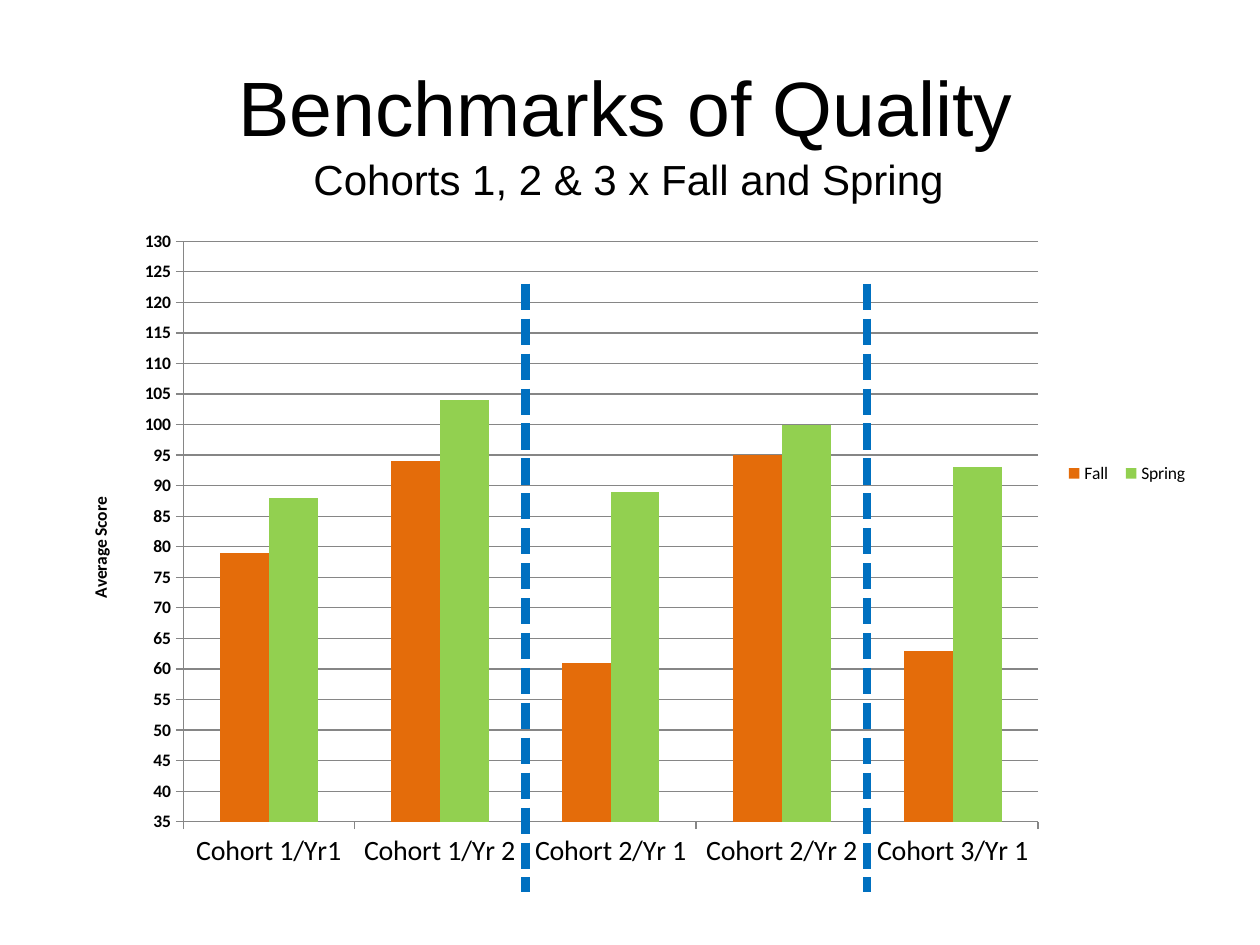
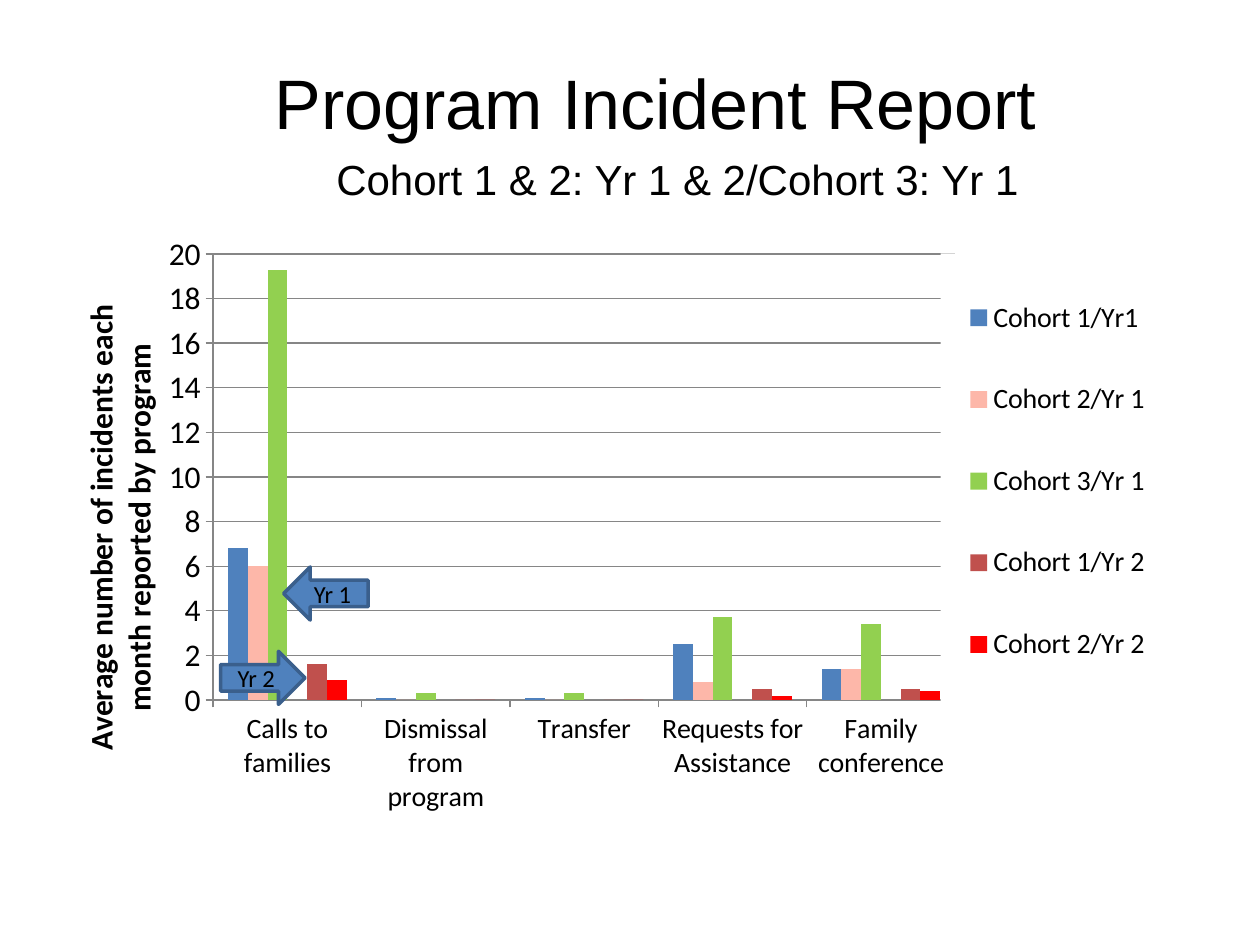
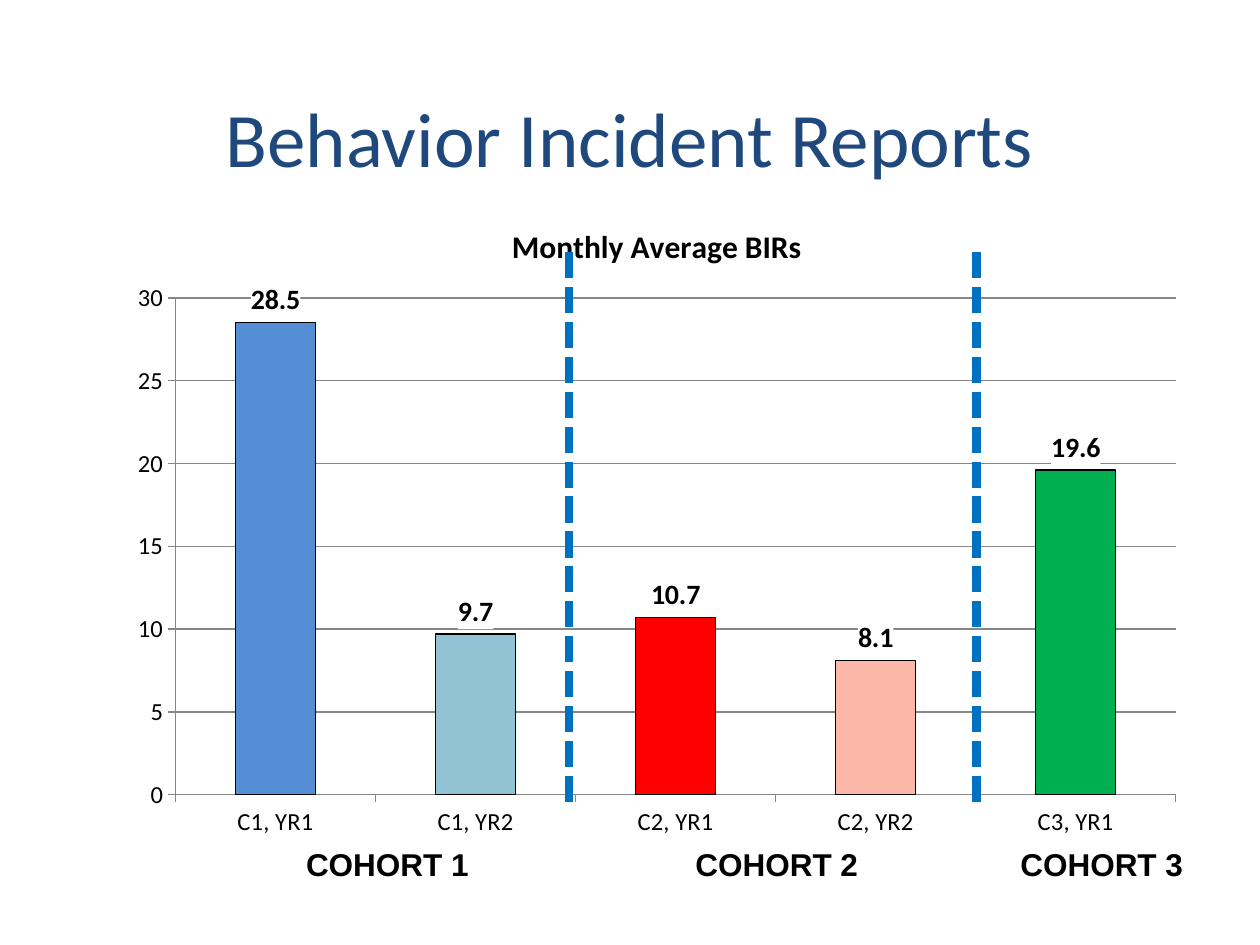
from dataclasses import dataclass

import lxml.etree
import pptx
import pptx.chart.data
import pptx.dml.color
import pptx.enum.chart
import pptx.enum.dml
import pptx.enum.shapes
import pptx.enum.text
import pptx.oxml.ns
import pptx.util

Cm, Pt = pptx.util.Cm, pptx.util.Pt
qn = pptx.oxml.ns.qn
SHAPES = pptx.enum.shapes.MSO_SHAPE
ALIGN = pptx.enum.text.PP_ALIGN
ANCHOR = pptx.enum.text.MSO_ANCHOR


@dataclass(frozen=True)
class Theme:
    heading_font: str = "Arial"
    chart_font: str = "Calibri"
    text: str = "000000"
    navy: str = "1F497D"
    white: str = "FFFFFF"
    grid: str = "868686"
    divider: str = "0070C0"
    blue: str = "4F81BD"
    blue_edge: str = "3A5F8C"
    orange: str = "E46C0A"
    light_orange: str = "F79646"
    lime: str = "92D050"
    pink: str = "FDB7A9"
    brick: str = "C0504D"
    red: str = "FF0000"
    sky: str = "558ED5"
    pale_teal: str = "92C3D4"
    teal: str = "4BACC6"
    green: str = "00B050"
    title_size: int = 44
    small_title_size: int = 40
    subtitle_size: int = 24
    label_size: int = 18
    category_size: int = 16
    small_label_size: int = 14
    chart_size: int = 10


THEME = Theme()


def rgb(color):
    return pptx.dml.color.RGBColor.from_string(color)


def style_font(font, size, name=THEME.chart_font, color=THEME.text, bold=False):
    font.size, font.name, font.bold = Pt(size), name, bold
    font.color.rgb = rgb(color)


def write(text_frame, text, align=None, **font_format):
    paragraph = text_frame.paragraphs[0]
    paragraph.alignment = align
    run = paragraph.add_run()
    run.text = text
    style_font(run.font, **font_format)


def paint(part, fill, edge=None, width=0.75):
    part.fill.solid()
    part.fill.fore_color.rgb = rgb(fill)
    if edge:
        part.line.color.rgb = rgb(edge)
        part.line.width = Pt(width)


def add_title(slide, box, text, align=ALIGN.LEFT, wrap=False, **font_format):
    title = slide.shapes.title
    title.left, title.top, title.width, title.height = map(Cm, box)
    frame = title.text_frame
    frame.word_wrap = wrap
    frame.auto_size = pptx.enum.text.MSO_AUTO_SIZE.NONE
    frame.vertical_anchor = ANCHOR.TOP
    write(frame, text, align, **font_format)


def add_label(slide, box, text, **font_format):
    label = slide.shapes.add_textbox(*map(Cm, box))
    label.text_frame.word_wrap = False
    label.text_frame.auto_size = pptx.enum.text.MSO_AUTO_SIZE.SHAPE_TO_FIT_TEXT
    write(label.text_frame, text, name=THEME.heading_font, **font_format)


def add_heading(slide, box, title, size, subtitle, subtitle_left, subtitle_width):
    """Place the title in the box and the subtitle just below it."""
    left, top = box[:2]
    add_title(slide, box, title, size=size, name=THEME.heading_font)
    add_label(slide, (left + subtitle_left, top + 1.9, subtitle_width, 1.27),
              subtitle, size=THEME.subtitle_size)


def add_dividers(slide, box, offsets, start, end):
    """Draw dashed vertical lines at offsets from the box's left edge."""
    left, top = box[:2]
    for offset in offsets:
        x = Cm(left + offset)
        line = slide.shapes.add_connector(
            pptx.enum.shapes.MSO_CONNECTOR.STRAIGHT,
            x, Cm(top + start), x, Cm(top + end))
        line.line.color.rgb = rgb(THEME.divider)
        line.line.width = Pt(5)
        line.line.dash_style = pptx.enum.dml.MSO_LINE.SQUARE_DOT
        lxml.etree.SubElement(line._element.spPr, qn("a:effectLst"))


def add_arrow(slide, box, offset, kind, text):
    arrow = slide.shapes.add_shape(
        kind, Cm(box[0] + offset[0]), Cm(box[1] + offset[1]), Cm(1.7), Cm(1.07))
    arrow.shadow.inherit = False
    paint(arrow, THEME.blue, THEME.blue_edge, 2)
    arrow.text_frame.word_wrap = False
    arrow.text_frame.vertical_anchor = ANCHOR.MIDDLE
    write(arrow.text_frame, text, ALIGN.CENTER, size=THEME.small_label_size)


def set_layout(element, after=None, inner=False, **fractions):
    """Fix a chart part at fractions (x, y, w, h) of the chart."""
    for old in element.findall(qn("c:layout")):
        element.remove(old)
    layout = lxml.etree.Element(qn("c:layout"))
    manual = lxml.etree.SubElement(layout, qn("c:manualLayout"))
    settings = {"layoutTarget": "inner"} if inner else {}
    settings |= {"xMode": "edge", "yMode": "edge", **fractions}
    for name, value in settings.items():
        lxml.etree.SubElement(manual, qn(f"c:{name}"), val=str(value))
    index = 0 if after is None else element.index(element.findall(qn(after))[-1]) + 1
    element.insert(index, layout)


def add_white_background(element, after):
    """Give a chart part a white fill, in the place its schema asks for."""
    background = lxml.etree.Element(qn("c:spPr"))
    fill = lxml.etree.SubElement(background, qn("a:solidFill"))
    lxml.etree.SubElement(fill, qn("a:srgbClr"), val=THEME.white)
    element.find(qn(after)).addnext(background)


def add_column_chart(slide, box, categories, series, plot, category_size,
                     value_size, value_bold=False):
    """Add a clustered column chart; series holds (name, values, color)."""
    data = pptx.chart.data.CategoryChartData()
    data.categories = categories
    for name, values, _ in series:
        data.add_series(name, values)
    chart = slide.shapes.add_chart(
        pptx.enum.chart.XL_CHART_TYPE.COLUMN_CLUSTERED, *map(Cm, box), data).chart
    chart.has_title = chart.has_legend = False
    style_font(chart.font, THEME.chart_size)
    columns = chart.plots[0]
    columns.vary_by_categories = False
    columns.gap_width, columns.overlap = 150, 0
    for column, (_, _, color) in zip(columns.series, series):
        paint(column.format, color)
        column.invert_if_negative = False
    for axis, size, bold in ((chart.category_axis, category_size, False),
                             (chart.value_axis, value_size, value_bold)):
        style_font(axis.tick_labels.font, size, bold=bold)
        axis.major_tick_mark = pptx.enum.chart.XL_TICK_MARK.OUTSIDE
        axis.format.line.color.rgb = rgb(THEME.grid)
    chart.value_axis.has_major_gridlines = True
    chart.value_axis.major_gridlines.format.line.color.rgb = rgb(THEME.grid)
    set_layout(chart._chartSpace.chart.plotArea, inner=True,
               **dict(zip("xywh", plot)))
    return chart


def add_value_title(axis, text, size, x, y):
    title = axis.axis_title
    write(title.text_frame, text, size=size, bold=True)
    body = title._element.find(".//" + qn("a:bodyPr"))
    body.set("rot", "-5400000")
    body.set("vert", "horz")
    set_layout(title._element, "c:tx", x=x, y=y)
    axis.tick_labels.number_format = "0"
    axis.tick_labels.number_format_is_linked = False


def add_legend(chart, size, hidden=(), **fractions):
    chart.has_legend = True
    legend = chart.legend
    legend.position = pptx.enum.chart.XL_LEGEND_POSITION.RIGHT
    legend.include_in_layout = False
    style_font(legend.font, size)
    set_layout(legend._element, "c:legendPos", **fractions)
    add_white_background(legend._element, "c:overlay")
    for index in hidden:
        entry = lxml.etree.Element(qn("c:legendEntry"))
        lxml.etree.SubElement(entry, qn("c:idx"), val=str(index))
        lxml.etree.SubElement(entry, qn("c:delete"), val="1")
        legend._element.find(qn("c:layout")).addprevious(entry)


def label_columns(series):
    labels = series.data_labels
    labels.show_value = True
    labels.number_format = "#,##0.0"
    labels.number_format_is_linked = False
    labels.position = pptx.enum.chart.XL_LABEL_POSITION.OUTSIDE_END
    style_font(labels.font, THEME.category_size, bold=True)
    add_white_background(labels._element, "c:numFmt")


def benchmark_chart(slide, box):
    chart = add_column_chart(
        slide, box,
        ["Cohort 1/Yr1", "Cohort 1/Yr 2", "Cohort 2/Yr 1", "Cohort 2/Yr 2",
         "Cohort 3/Yr 1"],
        [("Fall ", (79, 94, 61, 95, 63), THEME.orange),
         ("Spring ", (88, 104, 89, 100, 93), THEME.lime)],
        (0.106, 0.03, 0.754, 0.85), THEME.category_size, THEME.chart_size, True)
    axis = chart.value_axis
    axis.minimum_scale, axis.maximum_scale, axis.major_unit = 35, 130, 5
    add_value_title(axis, "Average Score", THEME.chart_size, 0.02, 0.4)
    add_legend(chart, THEME.chart_size, x=0.88, y=0.35, w=0.12, h=0.04)
    add_dividers(slide, box, (9.32, 16.21), 1.27, 13.53)


def incident_chart(slide, box):
    chart = add_column_chart(
        slide, box,
        ["Calls to families", "Dismissal from program", "Transfer",
         "Requests for Assistance", "Family conference"],
        [("Cohort 1/Yr1", (6.8, 0.1, 0.1, 2.5, 1.4), THEME.blue),
         ("Cohort 2/Yr 1", (6, 0, 0, 0.8, 1.4), THEME.pink),
         ("Cohort 3/Yr 1", (19.3, 0.3, 0.3, 3.7, 3.4), THEME.lime),
         ("Series 4", (None,) * 5, THEME.light_orange),
         ("Cohort 1/Yr 2", (1.6, 0, 0, 0.5, 0.5), THEME.brick),
         ("Cohort 2/Yr 2", (0.9, 0, 0, 0.2, 0.4), THEME.red)],
        (0.126, 0.051, 0.667, 0.685), THEME.category_size, THEME.label_size)
    chart.value_axis.maximum_scale = 20
    add_value_title(chart.value_axis,
                    "Average number of incidents each month reported by program",
                    THEME.label_size, 0, 0.12)
    add_legend(chart, THEME.category_size, hidden=[3], x=0.78, y=0.05, w=0.21, h=0.7)
    add_arrow(slide, box, (4.25, 6.98), SHAPES.LEFT_ARROW, "Yr 1")
    add_arrow(slide, box, (2.98, 8.68), SHAPES.RIGHT_ARROW, "Yr 2")


def behavior_chart(slide, box):
    chart = add_column_chart(
        slide, box, ["C1, YR1", "C1, YR2", "C2, YR1", "C2, YR2", "C3, YR1"],
        [("Series 1", (28.5, 9.7, 10.7, 8.1, 19.6), THEME.teal)],
        (0.055, 0.152, 0.925, 0.763), THEME.small_label_size, THEME.small_label_size)
    chart.has_title = True
    write(chart.chart_title.text_frame, "Monthly Average BIRs",
          size=THEME.label_size, bold=True)
    series = chart.plots[0].series[0]
    colors = (THEME.sky, THEME.pale_teal, THEME.red, THEME.pink, THEME.green)
    for index, color in enumerate(colors):
        paint(series.points[index].format, color, THEME.text)
    label_columns(series)
    add_dividers(slide, box, (9.13, 17.35), 1.07, 12.3)
    for number, offset in enumerate((3.58, 11.43, 17.98), start=1):
        add_label(slide, (box[0] + offset, box[1] + 12.91, 3.81, 1.02),
                  f"COHORT {number}", size=THEME.label_size, bold=True)


def main():
    presentation = pptx.Presentation()
    presentation.slide_width, presentation.slide_height = Cm(25.4), Cm(19.05)
    title_only = presentation.slide_layouts[5]
    benchmarks, incidents, behavior = (
        presentation.slides.add_slide(title_only) for _ in range(3))

    add_heading(benchmarks, (4.55, 1.07, 16.28, 2.13), "Benchmarks of Quality",
                THEME.title_size, "Cohorts 1, 2 & 3 x Fall and Spring", 1.52, 13.34)
    benchmark_chart(benchmarks, (1.27, 4.45, 22.86, 13.77))

    add_heading(incidents, (5.28, 1.07, 16.05, 1.96), "Program Incident Report",
                THEME.small_title_size, "Cohort 1 & 2: Yr 1 & 2/Cohort 3: Yr 1",
                1.25, 14.4)
    incident_chart(incidents, (1.47, 4.45, 22.43, 13.13))

    add_title(behavior, (1.27, 1.7, 22.86, 1.98), "Behavior Incident Reports",
              ALIGN.CENTER, True, size=THEME.title_size, color=THEME.navy)
    behavior_chart(behavior, (2.34, 4.01, 21.8, 13.13))

    presentation.save("out.pptx")


if __name__ == "__main__":
    main()
